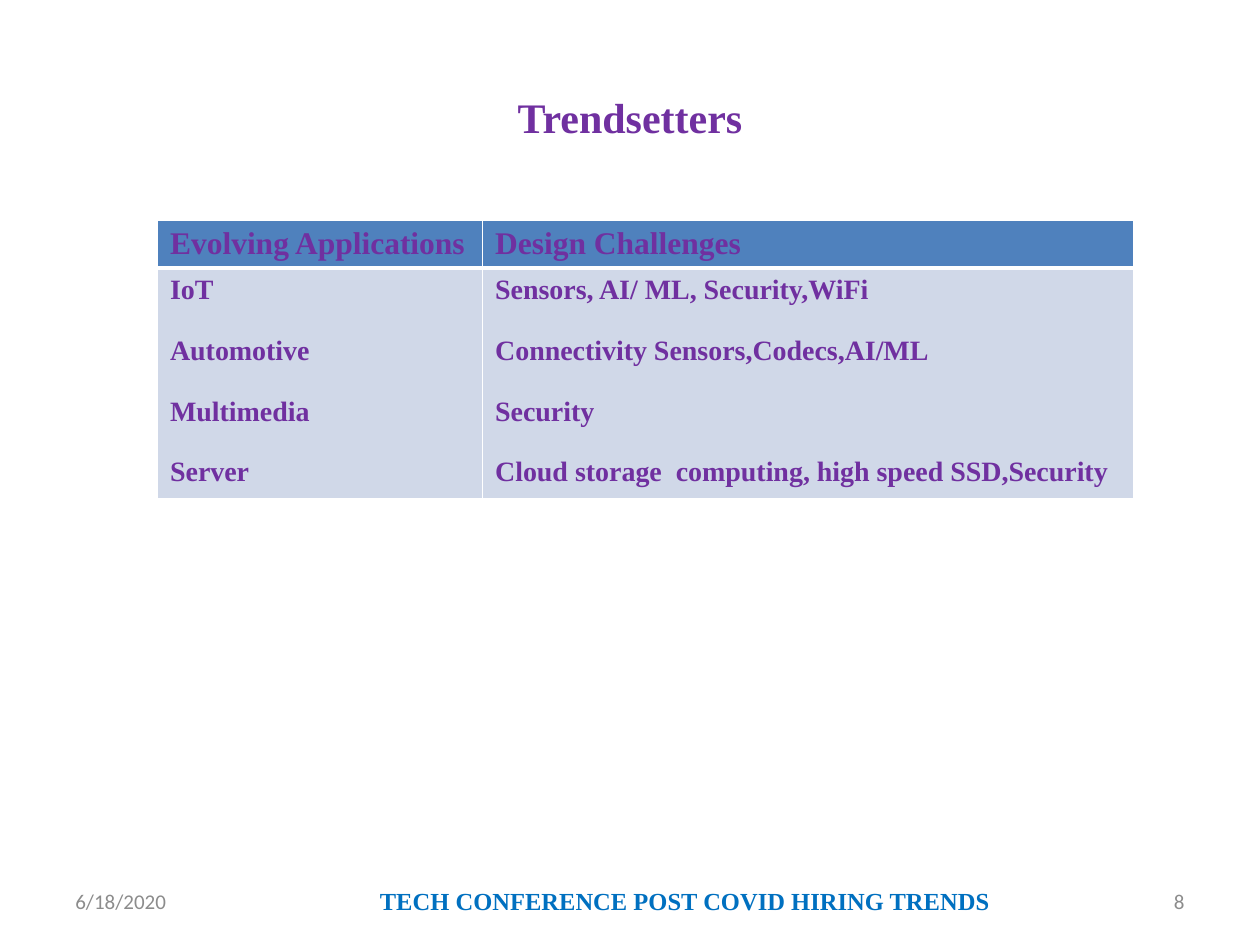
from lxml import etree
from pptx import Presentation
from pptx.dml.color import RGBColor
from pptx.enum.text import MSO_ANCHOR, PP_ALIGN
from pptx.oxml.ns import qn
from pptx.util import Inches, Pt

LEFT, CENTER, RIGHT = PP_ALIGN.LEFT, PP_ALIGN.CENTER, PP_ALIGN.RIGHT
MIDDLE = MSO_ANCHOR.MIDDLE
SERIF, SANS = "Times New Roman", "Calibri"
COLORS = {"purple": "7030A0", "header": "4F81BD", "body": "D0D8E8",
          "border": "FFFFFF", "gray": "8C8C8C", "blue": "0070C0"}

# Content
TITLE = "Trendsetters"
TABLE = {
    "Evolving Applications": ["IoT", "Automotive", "Multimedia", "Server"],
    "Design Challenges": [
        "Sensors, AI/ ML, Security,WiFi",
        "Connectivity Sensors,Codecs,AI/ML",
        "Security",
        "Cloud storage  computing, high speed SSD,Security",
    ],
}
# Text, left, width, alignment, font, size, color, bold
FOOTERS = [
    ("6/18/2020", 0.5, 2.33, LEFT, SANS, 12, "gray", False),
    ("8", 7.17, 2.33, RIGHT, SANS, 12, "gray", False),
    ("TECH CONFERENCE POST COVID HIRING TRENDS ", 2.67, 5.58, CENTER,
     SERIF, 14, "blue", True),
]
COLUMN_WIDTHS = [2.58, 5.17]
ROW_HEIGHTS = [0.37, 1.83]
PARAGRAPH_GAP = 17


def format_text(text_frame, font, size, color, bold, alignment=LEFT, gap=0):
    for index, paragraph in enumerate(text_frame.paragraphs):
        paragraph.alignment = alignment
        paragraph.space_before = Pt(gap if index else 0)
        for run in paragraph.runs:
            run.font.name = font
            run.font.size = Pt(size)
            run.font.bold = bold
            run.font.color.rgb = RGBColor.from_string(COLORS[color])


def set_borders(cell, bottom_width):
    properties = cell._tc.get_or_add_tcPr()
    widths = {"a:lnL": 1, "a:lnR": 1, "a:lnT": 1, "a:lnB": bottom_width}
    for position, (tag, width) in enumerate(widths.items()):
        line = etree.Element(qn(tag), w=str(Pt(width)))
        fill = etree.SubElement(line, qn("a:solidFill"))
        etree.SubElement(fill, qn("a:srgbClr"), val=COLORS["border"])
        properties.insert(position, line)


def fill_cell(cell, lines, size, fill, bottom_width):
    cell.text_frame.text = "\n".join(lines)
    format_text(cell.text_frame, SERIF, size, "purple", True, gap=PARAGRAPH_GAP)
    cell.fill.solid()
    cell.fill.fore_color.rgb = RGBColor.from_string(COLORS[fill])
    set_borders(cell, bottom_width)


presentation = Presentation()
presentation.slide_width, presentation.slide_height = Inches(10), Inches(7.5)
slide = presentation.slides.add_slide(presentation.slide_layouts[5])

# Title
title = slide.shapes.title
title.left, title.top = Inches(0.5), Inches(0.3)
title.width, title.height = Inches(9), Inches(1.25)
title.text_frame.text = TITLE
title.text_frame.vertical_anchor = MIDDLE
format_text(title.text_frame, SERIF, 24, "purple", True, CENTER)

# Table of applications and challenges
table = slide.shapes.add_table(
    len(ROW_HEIGHTS), len(COLUMN_WIDTHS), Inches(1.25), Inches(1.75),
    Inches(sum(COLUMN_WIDTHS)), Inches(sum(ROW_HEIGHTS))).table
for row, height in zip(table.rows, ROW_HEIGHTS):
    row.height = Inches(height)
for index, (heading, entries) in enumerate(TABLE.items()):
    table.columns[index].width = Inches(COLUMN_WIDTHS[index])
    fill_cell(table.cell(0, index), [heading], 18, "header", 3)
    fill_cell(table.cell(1, index), entries, 16, "body", 1)
    # The rule under the header is shared by both rows
    table.cell(1, index)._tc.tcPr.find(qn("a:lnT")).set("w", str(Pt(3)))

# Date, slide number and footer
for text, left, width, alignment, font, size, color, bold in FOOTERS:
    box = slide.shapes.add_textbox(
        Inches(left), Inches(6.95), Inches(width), Inches(0.4))
    box.text_frame.word_wrap = True
    box.text_frame.vertical_anchor = MIDDLE
    box.text_frame.text = text
    format_text(box.text_frame, font, size, color, bold, alignment)

presentation.save("out.pptx")
